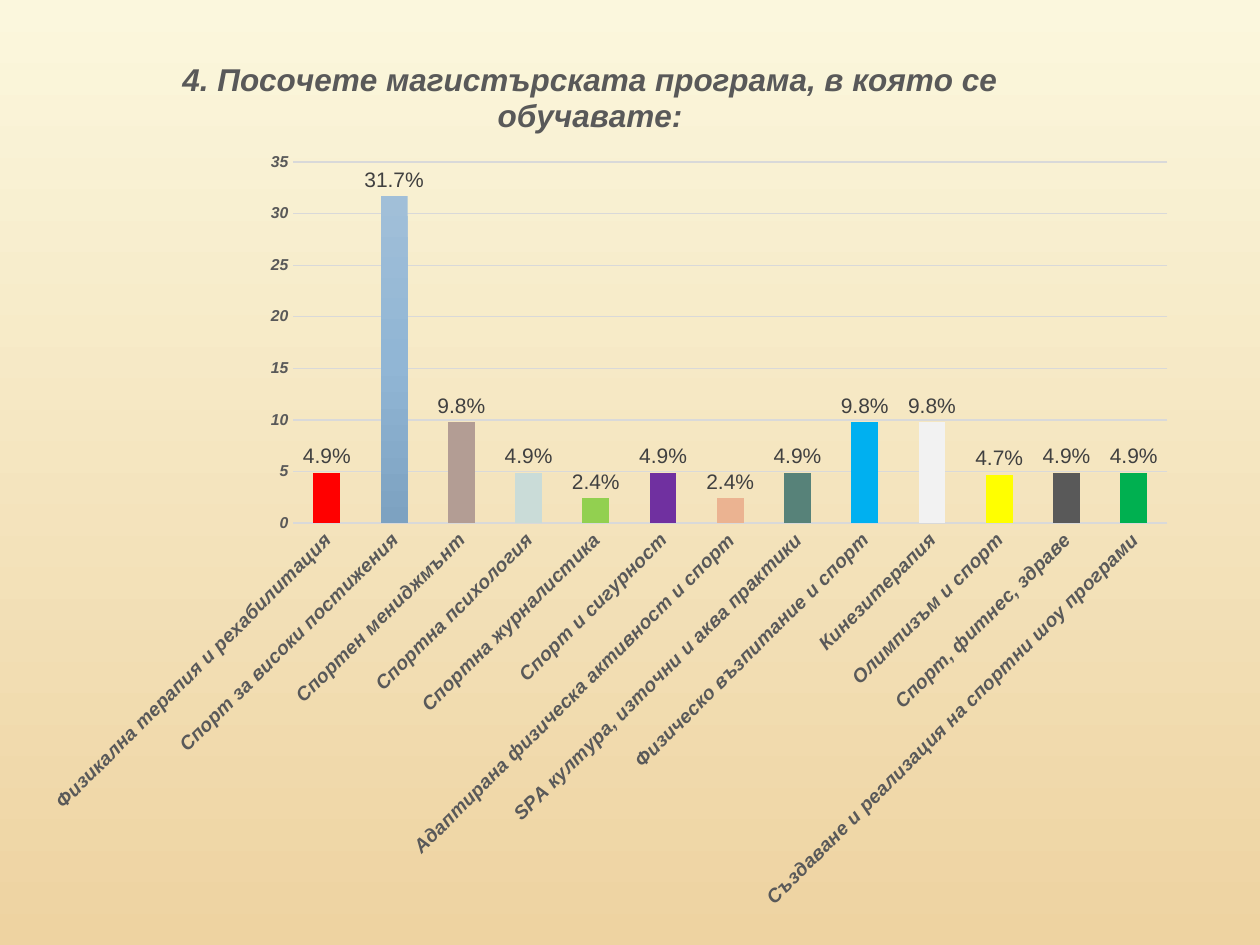
from copy import deepcopy

from lxml import etree
from pptx import Presentation
from pptx.chart.data import CategoryChartData
from pptx.dml.color import RGBColor
from pptx.enum.chart import XL_CHART_TYPE, XL_LABEL_POSITION, XL_TICK_MARK
from pptx.oxml.ns import qn
from pptx.util import Inches, Pt

COLUMNS = XL_CHART_TYPE.COLUMN_CLUSTERED
OUTSIDE_END = XL_LABEL_POSITION.OUTSIDE_END
NO_TICK = XL_TICK_MARK.NONE

FONT = "Arial"
BLACK = RGBColor(0x00, 0x00, 0x00)
TEXT_GRAY = RGBColor(0x59, 0x59, 0x59)
LABEL_GRAY = RGBColor(0x40, 0x40, 0x40)
GRID_GRAY = RGBColor(0xD9, 0xD9, 0xD9)
BACKGROUND_STOPS = [RGBColor(0xFB, 0xF7, 0xDD), RGBColor(0xEE, 0xD3, 0xA1)]
BLUE_STOPS = [RGBColor(0xA1, 0xBF, 0xD8), RGBColor(0x91, 0xB6, 0xD5), RGBColor(0x7D, 0xA2, 0xC1)]

TITLE = "4. Посочете магистърската програма, в която се обучавате:"
# Programme, share in percent, column colour (None keeps the series gradient)
PROGRAMMES = [
    ("Физикална терапия и рехабилитация", 4.9, RGBColor(0xFF, 0x00, 0x00)),
    ("Спорт за високи постижения", 31.7, None),
    ("Спортен мениджмънт", 9.8, RGBColor(0xB3, 0x9D, 0x94)),
    ("Спортна психология", 4.9, RGBColor(0xCA, 0xDC, 0xD8)),
    ("Спортна журналистика", 2.4, RGBColor(0x92, 0xD0, 0x50)),
    ("Спорт и сигурност", 4.9, RGBColor(0x70, 0x30, 0xA0)),
    ("Адаптирана физическа активност и спорт", 2.4, RGBColor(0xEB, 0xB3, 0x91)),
    ("SPA култура, източни и аква практики", 4.9, RGBColor(0x57, 0x82, 0x79)),
    ("Физическо възпитание и спорт", 9.8, RGBColor(0x00, 0xB0, 0xF0)),
    ("Кинезитерапия", 9.8, RGBColor(0xF2, 0xF2, 0xF2)),
    ("Олимпизъм и спорт", 4.7, RGBColor(0xFF, 0xFF, 0x00)),
    ("Спорт, фитнес, здраве", 4.9, RGBColor(0x59, 0x59, 0x59)),
    ("Създаване и реализация на спортни шоу програми", 4.9, RGBColor(0x00, 0xB0, 0x50)),
]


def set_manual_layout(parent, **fractions):
    """Place a chart part by fractions of the chart's size."""
    layout = parent.find(qn("c:layout"))
    if layout is None:
        layout = etree.Element(qn("c:layout"))
        text = parent.find(qn("c:tx"))
        if text is None:
            parent.insert(0, layout)
        else:
            text.addnext(layout)
    manual = etree.SubElement(layout, qn("c:manualLayout"))
    settings = {"xMode": "edge", "yMode": "edge", **fractions}
    if "w" in fractions:
        etree.SubElement(manual, qn("c:layoutTarget")).set("val", "inner")
    for name, value in settings.items():
        etree.SubElement(manual, qn(f"c:{name}")).set("val", str(value))


class SlideBuilder:
    def __init__(self, slide):
        self.slide = slide

    def format_font(self, font, size, color, bold=True, italic=False):
        font.name = FONT
        font.size = Pt(size)
        font.bold = bold
        font.italic = italic
        font.color.rgb = color

    def fill_downward(self, fill, colors):
        """Fill with evenly spaced colours from top to bottom."""
        fill.gradient()
        fill.gradient_angle = 270
        first = fill.gradient_stops[0]
        stop_list = fill._fill._gradFill.gsLst
        for _ in colors[2:]:
            stop_list.append(deepcopy(stop_list[0]))
        for index, (stop, color) in enumerate(zip(fill.gradient_stops, colors)):
            stop.color.rgb = color
            stop.position = index / (len(colors) - 1)

    def background(self, colors):
        self.fill_downward(self.slide.background.fill, colors)

    def column_chart(self, title, rows, left, top, width, height):
        data = CategoryChartData()
        data.categories = [name for name, _, _ in rows]
        data.add_series("Series 1", [value for _, value, _ in rows])
        chart = self.slide.shapes.add_chart(COLUMNS, left, top, width, height, data).chart
        self.format_font(chart.font, 10, BLACK)
        chart.has_legend = False
        self.chart_title(chart, title)
        self.axes(chart)
        self.columns(chart.plots[0], [color for _, _, color in rows])
        set_manual_layout(chart._chartSpace.chart.plotArea, x=0.23, y=0.15, w=0.75, h=0.4)

    def chart_title(self, chart, title):
        chart.has_title = True
        paragraph = chart.chart_title.text_frame.paragraphs[0]
        paragraph.text = title
        self.format_font(paragraph.font, 18, TEXT_GRAY, italic=True)
        self.format_font(paragraph.runs[0].font, 18, TEXT_GRAY, italic=True)
        set_manual_layout(chart.chart_title._element, x=0.13, y=0.03)

    def axes(self, chart):
        category_axis, value_axis = chart.category_axis, chart.value_axis
        for axis, size in ((category_axis, 11), (value_axis, 9)):
            axis.major_tick_mark = axis.minor_tick_mark = NO_TICK
            self.format_font(axis.tick_labels.font, size, TEXT_GRAY, italic=True)
        category_axis.format.line.color.rgb = GRID_GRAY
        category_axis.format.line.width = Pt(1)
        body = category_axis._element.find(qn("c:txPr")).find(qn("a:bodyPr"))
        body.set("rot", str(-45 * 60000))
        value_axis.minimum_scale = 0
        value_axis.maximum_scale = 35
        value_axis.major_unit = 5
        value_axis.format.line.fill.background()
        grid_line = value_axis.major_gridlines.format.line
        grid_line.color.rgb = GRID_GRAY
        grid_line.width = Pt(0.75)

    def columns(self, plot, colors):
        plot.gap_width = 150
        plot.vary_by_categories = False
        series = plot.series[0]
        self.fill_downward(series.format.fill, BLUE_STOPS)
        for index, color in enumerate(colors):
            if color is not None:
                fill = series.points[index].format.fill
                fill.solid()
                fill.fore_color.rgb = color
        labels = series.data_labels
        labels.show_value = True
        labels.position = OUTSIDE_END
        labels.number_format = '0.0"%"'
        labels.number_format_is_linked = False
        self.format_font(labels.font, 12, LABEL_GRAY, bold=False)


def main():
    presentation = Presentation()
    presentation.slide_width = Inches(10)
    presentation.slide_height = Inches(7.5)
    blank_layout = presentation.slide_layouts[6]
    builder = SlideBuilder(presentation.slides.add_slide(blank_layout))
    builder.background(BACKGROUND_STOPS)
    builder.column_chart(TITLE, PROGRAMMES, Inches(0.2), Inches(0.21), Inches(9.25), Inches(7.17))
    presentation.save("out.pptx")


if __name__ == "__main__":
    main()
